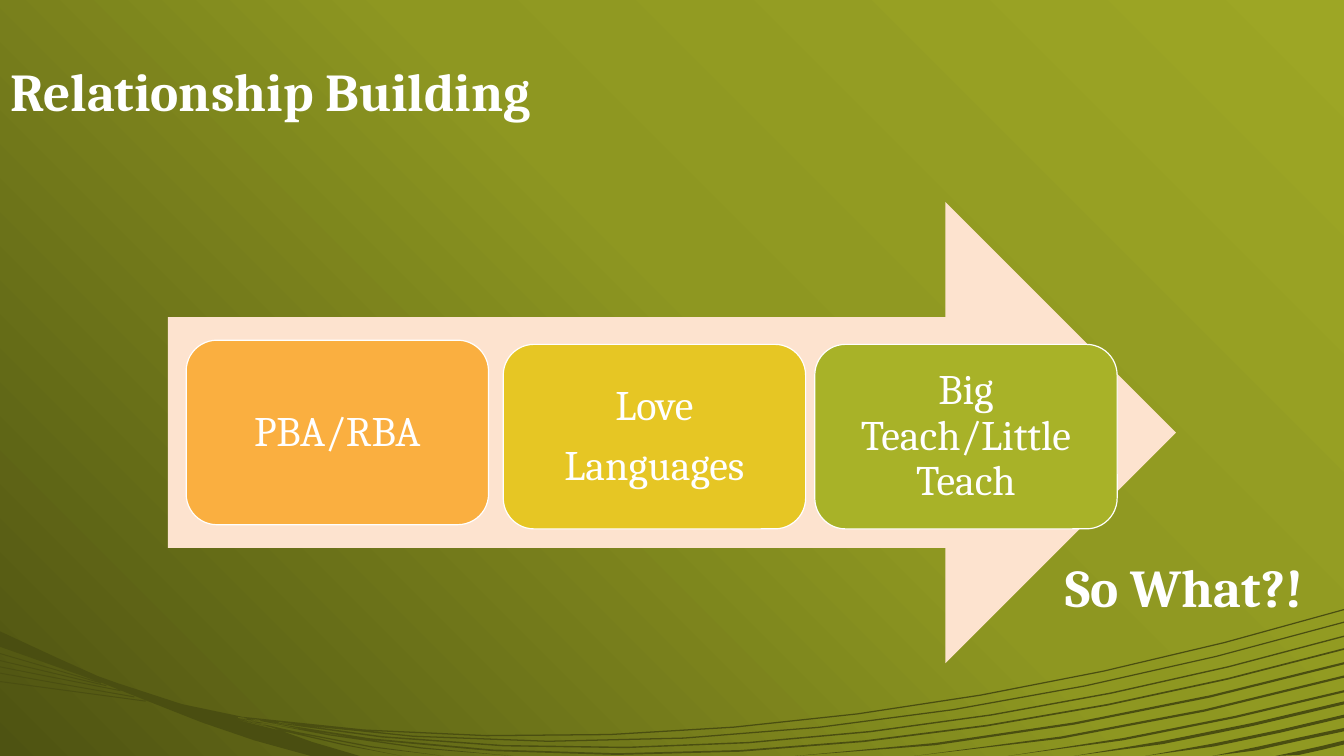
from copy import deepcopy

from pptx import Presentation
from pptx.dml.color import RGBColor
from pptx.enum.shapes import MSO_SHAPE
from pptx.enum.text import MSO_ANCHOR, MSO_AUTO_SIZE, PP_ALIGN
from pptx.oxml.ns import qn
from pptx.util import Pt

WHITE = RGBColor(0xFF, 0xFF, 0xFF)
WAVE = RGBColor(0x4A, 0x4E, 0x11)
PEACH = RGBColor(0xFD, 0xE3, 0xCF)
ORANGE = RGBColor(0xFA, 0xAF, 0x40)
YELLOW = RGBColor(0xE6, 0xC6, 0x24)
GREEN = RGBColor(0xA8, 0xB2, 0x28)
BACKGROUND_STOPS = [
    (0, RGBColor(0x9D, 0xA6, 0x25)),
    (0.45, RGBColor(0x8E, 0x97, 0x21)),
    (1, RGBColor(0x4E, 0x53, 0x12)),
]

WIDTH, HEIGHT = 960, 540
TITLE = "Relationship Building"
CONCLUSION = "So What?!"
TITLE_BOX = (0, 0, 720, 91.5)
CONCLUSION_BOX = (690, 354.5, 312, 91.5)
ARROW_BOX = (120, 144.25, 720, 329.5)
STEP_SIZE = (216, 131.8)
STEPS = [
    (["PBA/RBA"], ORANGE, 133, 243),
    (["Love", "Languages"], YELLOW, 359.5, 246),
    (["Big Teach/Little Teach"], GREEN, 582, 246),
]

HEADING_FONT = {"name": "Cambria", "size": Pt(38), "bold": True}
STEP_FONT = {"name": "Cambria", "size": Pt(30), "bold": False}
HEADING_FRAME = {
    "word_wrap": True,
    "auto_size": MSO_AUTO_SIZE.NONE,
    "vertical_anchor": MSO_ANCHOR.BOTTOM,
}
STEP_FRAME = {
    "word_wrap": True,
    "vertical_anchor": MSO_ANCHOR.MIDDLE,
    "margin_left": Pt(8.6),
    "margin_right": Pt(8.6),
    "margin_top": Pt(8.6),
    "margin_bottom": Pt(8.6),
}
LEFT = {"alignment": PP_ALIGN.LEFT, "line_spacing": 0.9}
CENTRED = {"alignment": PP_ALIGN.CENTER, "line_spacing": 0.9}
STEP_PARAGRAPH = {**CENTRED, "space_after": Pt(10.5)}

WAVE_BODY = [
    (0, 451), (41, 470), (70, 483), (84, 488), (130, 503), (173, 512),
    (223, 530), (257, 540), (222, 540), (182, 529), (144, 516),
    (106, 501), (72, 487.5), (0, 462),
]
LONG_STRANDS = [
    ((960, 435), (706, 510), (432, 547), (173, 512), 0.9),
    ((960, 444), (719, 513.5), (454, 551), (199, 515.5), 0.9),
    ((960, 454), (715, 523.5), (445, 558), (186, 514), 1),
    ((960, 463), (712, 531.5), (438, 564), (176, 513.5), 1.2),
    ((960, 473), (834.5, 507), (702, 531.5), (568, 540), 1.6),
    ((960, 482.5), (862, 509), (759, 529), (653, 540), 1.6),
    ((960, 493), (883, 512.5), (803, 529), (720, 540), 1.6),
    ((960, 501), (895, 517.5), (830, 530.5), (767, 540), 2.2),
    ((960, 510.5), (916, 521.5), (868, 531.5), (818, 540), 2.2),
    ((960, 520), (927.5, 526.5), (898.5, 534), (866, 540), 2.4),
    ((960, 529), (944.5, 533), (928, 536.5), (911, 540), 2.8),
    ((170, 512), (235, 526), (301, 535.5), (366.5, 540), 0.9),
    ((158, 510.5), (212.5, 523.5), (266, 535), (317, 540), 0.9),
    ((158, 510.5), (199, 521), (245, 532), (287, 540), 0.9),
]
FAN_STRANDS = [
    ((0, 466.5), (72, 487.5)),
    ((0, 471.5), (76, 489.5)),
    ((0, 476), (86, 493)),
    ((0, 480.5), (96, 497.5)),
    ((0, 486.5), (104, 500.5)),
]


def apply(target, values):
    for name, value in values.items():
        setattr(target, name, value)


def place(shape, box):
    apply(shape, dict(zip(("left", "top", "width", "height"), map(Pt, box))))


def paint(shape, color):
    shape.shadow.inherit = False
    shape.fill.solid()
    shape.fill.fore_color.rgb = color
    shape.line.fill.background()


def write(shape, lines, frame_format, paragraph_format, font_format):
    frame = shape.text_frame
    frame.text = "\n".join(lines)
    apply(frame, frame_format)
    for paragraph in frame.paragraphs:
        apply(paragraph, paragraph_format)
        for run in paragraph.runs:
            apply(run.font, font_format)
            run.font.color.rgb = WHITE


def curve(controls):
    steps = max(3, round(abs(controls[0][0] - controls[3][0]) / 90))
    points = []
    for step in range(steps + 1):
        t = step / steps
        weights = ((1 - t) ** 3, 3 * t * (1 - t) ** 2, 3 * t * t * (1 - t), t ** 3)
        points.append(tuple(
            sum(weight * control[axis] for weight, control in zip(weights, controls))
            for axis in (0, 1)
        ))
    return points


def ribbon(points, thickness):
    lower = [(x, min(y + thickness, HEIGHT)) for x, y in reversed(points)]
    return points + lower


def draw_wave(slide):
    outlines = [ribbon(curve(controls), thickness)
                for *controls, thickness in LONG_STRANDS]
    outlines += [ribbon(list(strand), 0.7) for strand in FAN_STRANDS]
    builder = slide.shapes.build_freeform(*WAVE_BODY[0], scale=Pt(1) / 100)
    builder = slide.shapes.build_freeform(
        *(100 * value for value in WAVE_BODY[0]), scale=Pt(1) / 100)
    for index, outline in enumerate([WAVE_BODY] + outlines):
        points = [(100 * x, 100 * y) for x, y in outline]
        if index:
            builder.move_to(*points[0])
        builder.add_line_segments(points[1:], close=True)
    paint(builder.convert_to_shape(), WAVE)


def draw_background(slide):
    fill = slide.background.fill
    fill.gradient()
    fill.gradient_angle = 225
    stop_list = slide._element.find(".//" + qn("a:gsLst"))
    stop_list.append(deepcopy(stop_list[-1]))
    for stop, (position, color) in zip(fill.gradient_stops, BACKGROUND_STOPS):
        stop.position = position
        stop.color.rgb = color


def draw_process(slide):
    arrow = slide.shapes.add_shape(MSO_SHAPE.RIGHT_ARROW, *map(Pt, ARROW_BOX))
    paint(arrow, PEACH)
    for lines, color, left, top in STEPS:
        box = (left, top, *STEP_SIZE)
        step = slide.shapes.add_shape(MSO_SHAPE.ROUNDED_RECTANGLE, *map(Pt, box))
        paint(step, color)
        step.line.color.rgb = WHITE
        step.line.width = Pt(0.85)
        write(step, lines, STEP_FRAME, STEP_PARAGRAPH, STEP_FONT)


def main():
    presentation = Presentation()
    presentation.slide_width = Pt(WIDTH)
    presentation.slide_height = Pt(HEIGHT)
    slide = presentation.slides.add_slide(presentation.slide_layouts[5])
    draw_background(slide)
    draw_wave(slide)
    title = slide.shapes.title
    place(title, TITLE_BOX)
    write(title, [TITLE], HEADING_FRAME, LEFT, HEADING_FONT)
    draw_process(slide)
    conclusion = slide.shapes.add_textbox(*map(Pt, CONCLUSION_BOX))
    write(conclusion, [CONCLUSION], HEADING_FRAME, CENTRED, HEADING_FONT)
    presentation.save("out.pptx")


if __name__ == "__main__":
    main()
